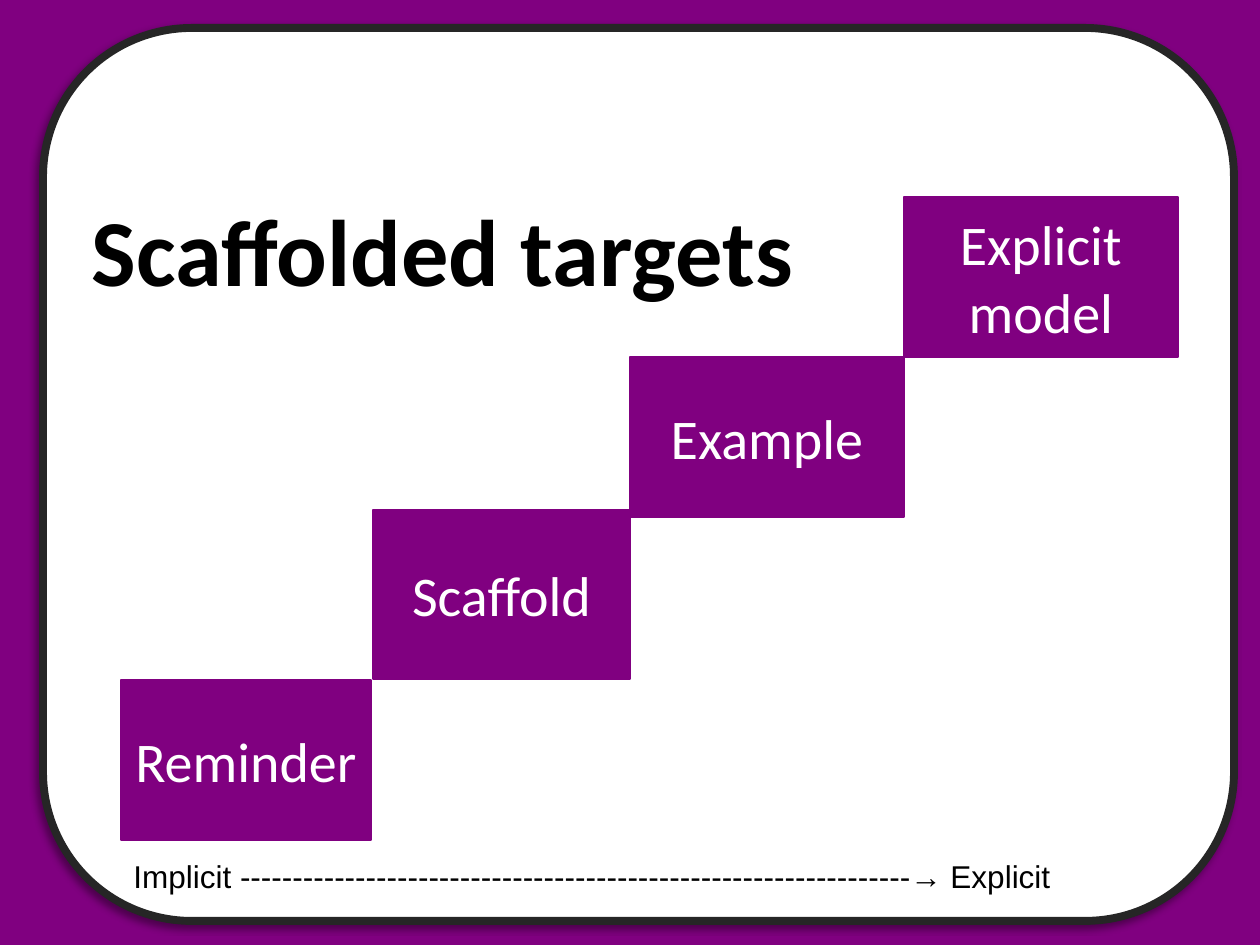
"""Build the scaffolded targets slide with its rising staircase of boxes."""
from lxml import etree
from pptx import Presentation
from pptx.dml.color import RGBColor
from pptx.enum.shapes import MSO_SHAPE
from pptx.enum.text import MSO_ANCHOR, MSO_AUTO_SIZE, PP_ALIGN
from pptx.util import Pt

RECTANGLE, ROUNDED = MSO_SHAPE.RECTANGLE, MSO_SHAPE.ROUNDED_RECTANGLE
MIDDLE, BOTTOM = MSO_ANCHOR.MIDDLE, MSO_ANCHOR.BOTTOM
LEFT, CENTER = PP_ALIGN.LEFT, PP_ALIGN.CENTER
FIT_SHAPE, NO_FIT = MSO_AUTO_SIZE.SHAPE_TO_FIT_TEXT, MSO_AUTO_SIZE.NONE
COLORS = {"purple": "800080", "white": "FFFFFF", "black": "000000", "frame": "262626"}
SCALE = 914400 / 126
SHADOW = (
    '<a:effectLst xmlns:a="http://schemas.openxmlformats.org/drawingml/2006/main">'
    '<a:outerShdw blurRad="50800" dist="38100" dir="8100000" algn="tr" rotWithShape="0">'
    '<a:srgbClr val="000000"><a:alpha val="40000"/></a:srgbClr>'
    '</a:outerShdw></a:effectLst>'
)


def add_box(kind, bounds, fill, line, width):
    shape = slide.shapes.add_shape(kind, *[round(value * SCALE) for value in bounds])
    shape.shadow.inherit = False
    shape.fill.solid()
    shape.fill.fore_color.rgb = RGBColor.from_string(COLORS[fill])
    shape.line.color.rgb = RGBColor.from_string(COLORS[line])
    shape.line.width = Pt(width)
    return shape


def write(shape, text, font_name, size, color, alignment, anchor=None):
    frame = shape.text_frame
    frame.word_wrap = True
    frame.vertical_anchor = anchor
    paragraph = frame.paragraphs[0]
    paragraph.text = text
    paragraph.alignment = alignment
    paragraph.font.name = font_name
    paragraph.font.size = Pt(size)
    paragraph.font.color.rgb = RGBColor.from_string(COLORS[color])
    return paragraph


presentation = Presentation()
presentation.slide_width = round(1260 * SCALE)
presentation.slide_height = round(945 * SCALE)
slide = presentation.slides.add_slide(presentation.slide_layouts[5])
slide.background.fill.solid()
slide.background.fill.fore_color.rgb = RGBColor.from_string(COLORS["purple"])

card = add_box(ROUNDED, (43, 28, 1191, 893), "white", "frame", 4.5)
card_properties = card._element.spPr
card_properties.remove(card_properties.effectLst)
card_properties.append(etree.fromstring(SHADOW))

title = slide.shapes.title
title.left, title.top, title.width, title.height = [
    round(value * SCALE) for value in (79, 195, 1086, 118)
]
card._element.addnext(title._element)
heading = write(title, "Scaffolded targets", "Calibri", 54, "black", LEFT, BOTTOM)
heading.font.bold = True
heading.line_spacing = 0.9
title.text_frame.auto_size = NO_FIT

steps = [
    ("Reminder", (121, 680, 250, 160)),
    ("Scaffold", (373, 510, 257, 169)),
    ("Example", (630, 357, 274, 160)),
    ("Explicit model", (904, 197, 274, 160)),
]
for label, bounds in steps:
    step = add_box(RECTANGLE, bounds, "purple", "purple", 1)
    write(step, label, "Calibri", 32, "white", CENTER, MIDDLE)

caption = slide.shapes.add_textbox(*[round(value * SCALE) for value in (121, 851, 1056, 50)])
write(caption, "Implicit " + "-" * 64 + "→ Explicit", "Arial", 18, "black", LEFT)
caption.text_frame.auto_size = FIT_SHAPE

presentation.save("out.pptx")
